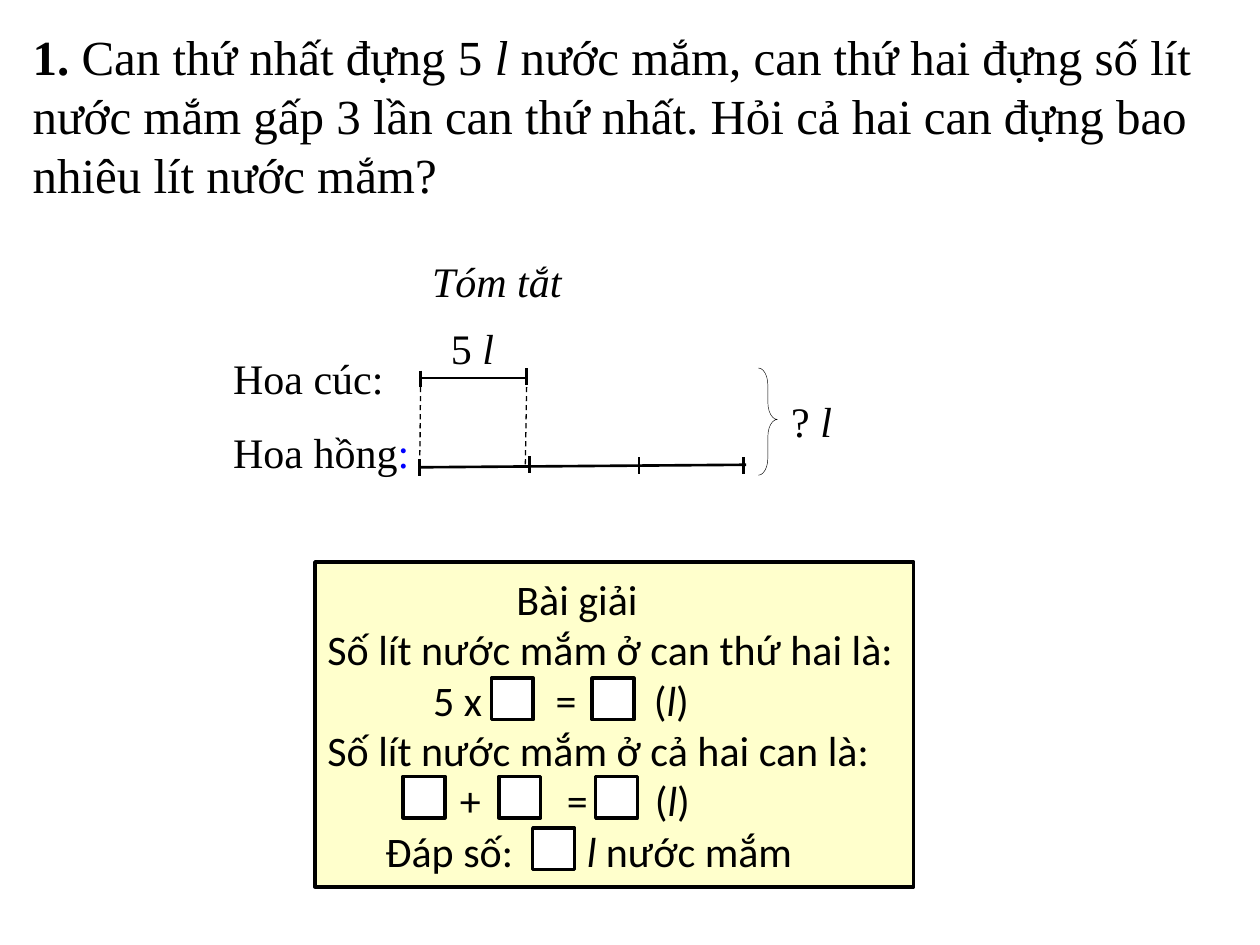
"""Build a slide with a word problem, its line diagram and a fill-in solution."""
import pptx
import pptx.dml.color
import pptx.enum.dml
import pptx.enum.shapes
import pptx.enum.text
import pptx.oxml.ns
import pptx.util
from lxml import etree

Cm = pptx.util.Cm
Pt = pptx.util.Pt
SHAPES = pptx.enum.shapes.MSO_SHAPE

COLORS = {"ink": "000000", "accent": "0000FF", "panel": "FFFFCC", "blank": "FFFFFF"}
SERIF, SANS = "Times New Roman", "Calibri"

QUESTION = [("1. ", "bold"), ("Can thứ nhất đựng 5 ", ""), ("l ", "italic"),
            ("nước mắm, can thứ hai đựng số lít nước mắm gấp 3 lần can thứ nhất. "
             "Hỏi cả hai can đựng bao nhiêu lít nước mắm?", "")]
TEXT_BOXES = [
    ((0.41, 0.41, 25.07, 3.84), 28, [QUESTION]),
    ((4.45, 6.99, 8.26, 2.82), 24,
     [[("Hoa cúc:", "")], [("Hoa hồng", ""), (":", "accent")]]),
    ((8.46, 5.03, 4.47, 1.27), 24, [[("Tóm tắt", "italic")]]),
    ((8.84, 6.38, 1.52, 1.27), 24, [[("5", ""), (" l", "italic")]]),
    ((15.7, 7.85, 1.52, 1.27), 24, [[("?", ""), (" l", "italic")]]),
]

GUIDES = [(8.48, 7.62, 8.48, 8.89), (8.48, 7.62, 8.46, 9.45), (10.62, 7.62, 10.59, 9.37)]
BARS = [(8.46, 7.62, 10.64, 7.62), (8.46, 9.42, 15.04, 9.37)]
TICK_HEIGHT = 0.34
TICKS = [(10.62, 7.42), (8.48, 7.47), (14.99, 9.22), (8.46, 9.25), (12.88, 9.22), (10.67, 9.2)]
BRACE = (15.29, 7.42, 0.38, 2.16)

PANEL = (6.35, 11.33, 12.07, 6.55)
SOLUTION = [
    ([3.81], [("\tBài giải", "")]),
    ([], [("Số lít nước mắm ở can thứ hai là:", "")]),
    ([2.13, 4.6, 6.58], [("\t5 x\t=\t(", ""), ("l", "italic"), (")", "")]),
    ([], [("Số lít nước mắm ở cả hai can là:", "")]),
    ([2.67, 4.83, 6.6], [("\t+\t=\t(", ""), ("l", "italic"), (")", "")]),
    ([1.17, 5.23], [("\tĐáp số:\t", ""), ("l ", "italic"), ("nước mắm", "")]),
]
BLANK_SIZE = 0.84
BLANK_ROWS = [(13.67, [9.91, 11.94]), (15.65, [8.13, 10.06, 12.01]), (16.69, [10.74])]


def color(name):
    return pptx.dml.color.RGBColor.from_string(COLORS[name])


def write_paragraph(paragraph, runs, font, size):
    paragraph.font.name = font
    paragraph.font.size = Pt(size)
    paragraph.font.color.rgb = color("ink")
    for text, style in runs:
        run = paragraph.add_run()
        run.text = text
        if style == "bold":
            run.font.bold = True
        elif style == "italic":
            run.font.italic = True
        elif style:
            run.font.color.rgb = color(style)


def add_tabs(paragraph, positions):
    tab_list = etree.SubElement(paragraph._p.get_or_add_pPr(), pptx.oxml.ns.qn("a:tabLst"))
    for position in positions:
        etree.SubElement(tab_list, pptx.oxml.ns.qn("a:tab"), pos=str(int(Cm(position))), algn="l")


def add_text_box(slide, box, size, paragraphs):
    frame = slide.shapes.add_textbox(*map(Cm, box)).text_frame
    frame.word_wrap = True
    frame.auto_size = pptx.enum.text.MSO_AUTO_SIZE.SHAPE_TO_FIT_TEXT
    for index, runs in enumerate(paragraphs):
        paragraph = frame.add_paragraph() if index else frame.paragraphs[0]
        if index:
            paragraph.space_before = Pt(13.5)
        write_paragraph(paragraph, runs, SERIF, size)


def add_line(slide, ends, width, dashed=False):
    line = slide.shapes.add_connector(pptx.enum.shapes.MSO_CONNECTOR.STRAIGHT, *map(Cm, ends))
    line.line.color.rgb = color("ink")
    line.line.width = Pt(width)
    if dashed:
        line.line.dash_style = pptx.enum.dml.MSO_LINE.DASH
    etree.SubElement(line._element.spPr, pptx.oxml.ns.qn("a:effectLst"))


def add_outline(slide, kind, box, width, fill=None):
    shape = slide.shapes.add_shape(kind, *map(Cm, box))
    shape.shadow.inherit = False
    if fill:
        shape.fill.solid()
        shape.fill.fore_color.rgb = color(fill)
    else:
        shape.fill.background()
    shape.line.color.rgb = color("ink")
    shape.line.width = Pt(width)
    return shape


def add_diagram(slide):
    for ends in GUIDES:
        add_line(slide, ends, 0.75, dashed=True)
    for ends in BARS:
        add_line(slide, ends, 1.5)
    for left, top in TICKS:
        add_line(slide, (left, top, left, top + TICK_HEIGHT), 1.5)
    brace = add_outline(slide, SHAPES.RIGHT_BRACE, BRACE, 0.25)
    brace.adjustments[0] = 0.91
    brace.adjustments[1] = 0.48


def add_solution(slide):
    frame = add_outline(slide, SHAPES.RECTANGLE, PANEL, 2, "panel").text_frame
    frame.word_wrap = True
    frame.vertical_anchor = pptx.enum.text.MSO_ANCHOR.MIDDLE
    for index, (tabs, runs) in enumerate(SOLUTION):
        paragraph = frame.add_paragraph() if index else frame.paragraphs[0]
        paragraph.alignment = pptx.enum.text.PP_ALIGN.JUSTIFY
        if tabs:
            add_tabs(paragraph, tabs)
        write_paragraph(paragraph, runs, SANS, 24)
    for top, lefts in BLANK_ROWS:
        for left in lefts:
            add_outline(slide, SHAPES.RECTANGLE, (left, top, BLANK_SIZE, BLANK_SIZE), 2, "blank")


def main():
    presentation = pptx.Presentation()
    presentation.slide_width = Cm(25.4)
    presentation.slide_height = Cm(19.05)
    slide = presentation.slides.add_slide(presentation.slide_layouts[6])
    for box, size, paragraphs in TEXT_BOXES:
        add_text_box(slide, box, size, paragraphs)
    add_diagram(slide)
    add_solution(slide)
    presentation.save("out.pptx")


if __name__ == "__main__":
    main()
